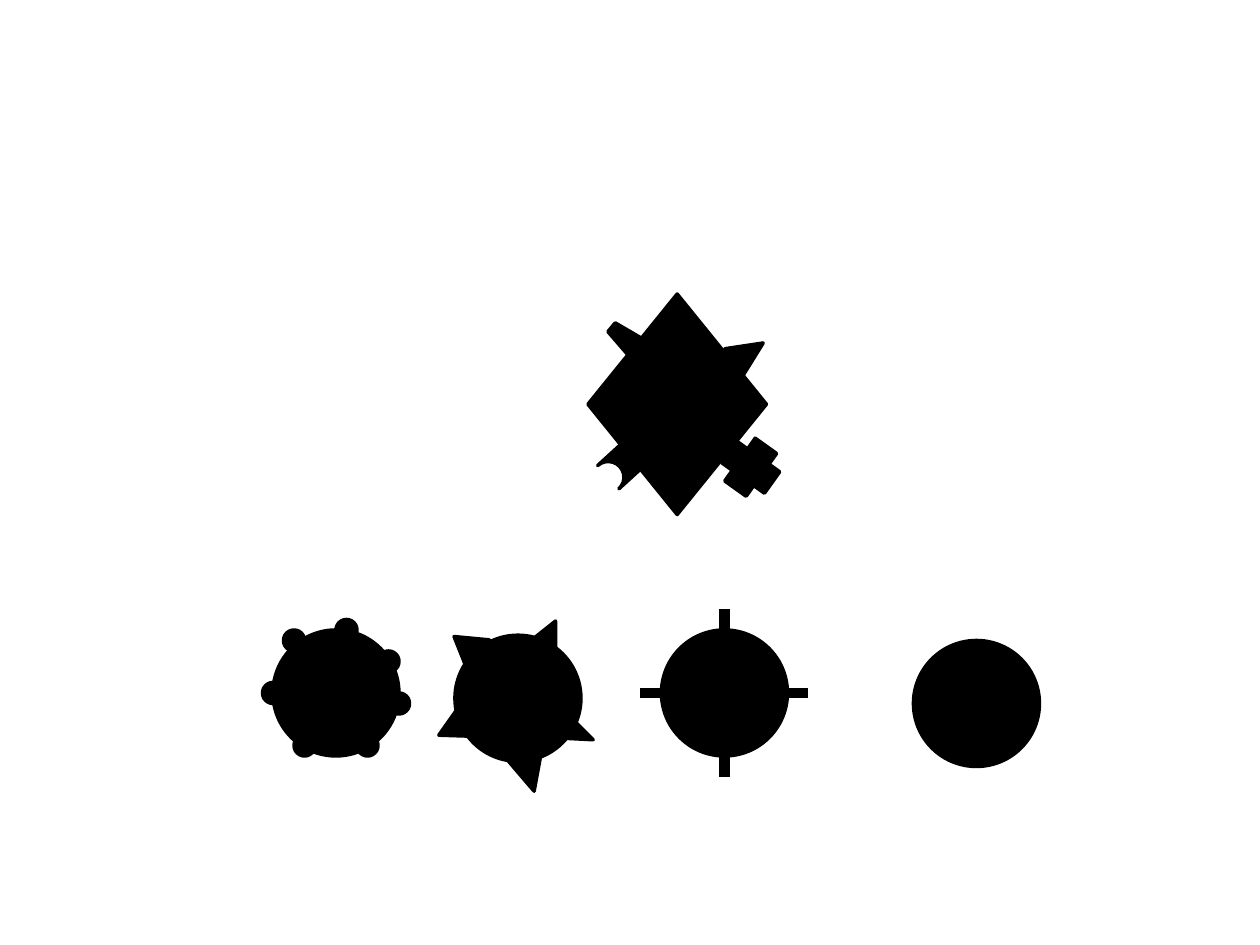
"""Draw a slide of black germ-like silhouettes: a spiked diamond above four round bodies."""
import pptx
import pptx.dml.color
import pptx.enum.shapes
import pptx.oxml.xmlchemy
import pptx.util

Pt = pptx.util.Pt
PRESET = pptx.enum.shapes.MSO_SHAPE
STRAIGHT = pptx.enum.shapes.MSO_CONNECTOR.STRAIGHT


def paint(color_format, hex_color):
    color_format.rgb = pptx.dml.color.RGBColor.from_string(hex_color)


class Silhouettes:
    def __init__(self, slide, ink="000000", outline=2, spoke_width=6):
        self.slide = slide
        self.ink = ink
        self.outline = outline
        self.spoke_width = spoke_width

    def group(self):
        return self.slide.shapes.add_group_shape().shapes

    def solid(self, parent, preset, left, top, width, height, rotation=0):
        solid = parent.add_shape(preset, Pt(left), Pt(top), Pt(width), Pt(height))
        solid.rotation = rotation
        solid.shadow.inherit = False
        solid.fill.solid()
        paint(solid.fill.fore_color, self.ink)
        paint(solid.line.color, self.ink)
        solid.line.width = Pt(self.outline)

    def disc(self, parent, left, top, size=72):
        self.solid(parent, PRESET.OVAL, left, top, size, size)

    def spoke(self, parent, x1, y1, x2, y2):
        spoke = parent.add_connector(STRAIGHT, Pt(x1), Pt(y1), Pt(x2), Pt(y2))
        paint(spoke.line.color, self.ink)
        spoke.line.width = Pt(self.spoke_width)
        properties = spoke._element.spPr
        properties.append(pptx.oxml.xmlchemy.OxmlElement("a:effectLst"))


def main():
    deck = pptx.Presentation()
    deck.slide_width, deck.slide_height = Pt(720), Pt(540)
    art = Silhouettes(deck.slides.add_slide(deck.slide_layouts[6]))

    art.disc(art.slide.shapes, 522, 366)

    knobbed = art.group()
    art.disc(knobbed, 156, 360)
    for left, top in [(162, 360), (150, 390), (168, 420), (204, 420),
                      (222, 396), (216, 372), (192, 354)]:
        art.disc(knobbed, left, top, 12)

    spiked = art.group()
    art.disc(spiked, 260, 363)
    for spike in [(304.5, 354, 18, 18.5, 25.5), (262, 360, 18.5, 18, 68.2),
                  (322.5, 409, 15, 19.5, 114), (292.5, 431.5, 20, 21, 165),
                  (249, 406, 21, 19.5, 243.6)]:
        art.solid(spiked, PRESET.ISOSCELES_TRIANGLE, *spike)

    spoked = art.group()
    center_x, center_y, inner, outer = 414, 396, 30, 48
    art.disc(spoked, center_x - 36, center_y - 36)
    for dx, dy, start, end in [(0, -1, inner, outer), (0, 1, outer, inner),
                               (1, 0, inner - 6, outer), (-1, 0, outer, inner - 6)]:
        art.spoke(spoked, center_x + dx * start, center_y + dy * start,
                  center_x + dx * end, center_y + dy * end)

    receptors = art.group()
    for part in [(PRESET.DIAMOND, 336, 168, 102, 126),
                 (PRESET.TRAPEZOID, 350.5, 183.5, 13, 19.5, 309.7),
                 (PRESET.ISOSCELES_TRIANGLE, 418.5, 191.5, 18.5, 20, 56.6),
                 (PRESET.FLOWCHART_STORED_DATA, 340.5, 245.5, 54, 18, 137.6),
                 (PRESET.CROSS, 414, 252, 30, 30, 305.5)]:
        art.solid(receptors, *part)

    deck.save("out.pptx")


if __name__ == "__main__":
    main()
